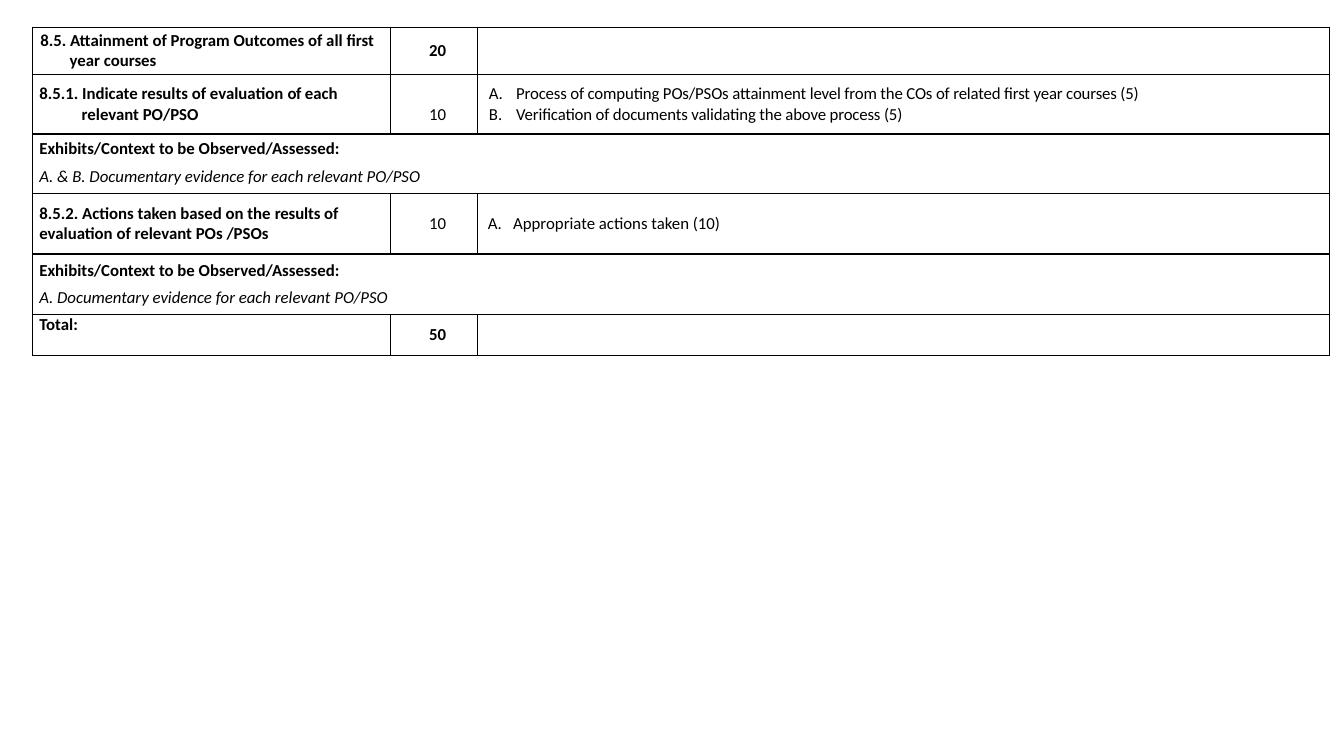
"""Build the slide with the table on attainment of program outcomes."""
from dataclasses import dataclass

from lxml.etree import SubElement
from pptx import Presentation
from pptx.dml.color import RGBColor
from pptx.enum.text import MSO_ANCHOR, PP_ALIGN
from pptx.oxml.ns import qn
from pptx.util import Inches, Pt

BLACK = RGBColor(0x00, 0x00, 0x00)
WHITE = RGBColor(0xFF, 0xFF, 0xFF)


@dataclass
class Para:
    """One paragraph: runs of (text, spacing in points) and its layout."""
    runs: list
    left: float = 0.07
    hanging: float = 0
    before: float = 0
    line: float = None
    bold: bool = False
    italic: bool = False
    centred: bool = False
    lettered: bool = False


@dataclass
class Entry:
    """The content of one table cell."""
    paras: list
    span: int = 1
    top: float = 0
    anchor: MSO_ANCHOR = MSO_ANCHOR.MIDDLE


def heading(*runs, **layout):
    """Return a bold paragraph."""
    return Para(list(runs), bold=True, **layout)


def marks(value, before=0, bold=False, top=0):
    """Return a cell with a centred number of marks."""
    return Entry([Para([(value, 0)], before=before, bold=bold, centred=True)], top=top)


def exhibits(evidence, heading_before, evidence_before, line=None):
    """Return a full-width cell that names the evidence to be assessed."""
    return Entry([
        heading(("Exhibits/Context to be Observed/Assessed:", 0), before=heading_before, line=line),
        Para([(evidence, 0)], before=evidence_before, italic=True),
    ], span=3)


def criterion(text, left, hanging, before=0, spacing=0):
    """Return a lettered list item."""
    return Para([(text, spacing)], left=left, hanging=hanging, before=before, lettered=True)


COLUMN_WIDTHS = [3.55, 0.87, 8.45]
ROW_HEIGHTS = [0.47, 0.59, 0.59, 0.6, 0.6, 0.41]
OUTCOMES = [
    [Entry([heading(("8.5. Attainment of Program Outcomes of all first year courses", 0),
                    left=0.37, hanging=0.29, before=2.7)]),
     marks("20", before=9.7, bold=True), Entry([])],
    [Entry([heading(("8.5.1. Indicate results of evaluation ", 0), ("of ", -0.3),
                    ("each relevant PO/PSO", 0), left=0.49, hanging=0.42, before=6.8)]),
     marks("10", top=0.2),
     Entry([criterion("Process of computing POs/PSOs attainment level from the COs of "
                      "related first year courses (5)", 0.38, 0.27, 6.8, -0.1),
            criterion("Verification of documents validating the above process (5)",
                      0.38, 0.27, spacing=-0.1)])],
    [exhibits("A. & B. Documentary evidence for each relevant PO/PSO", 0, 5.5, 13.7)],
    [Entry([heading(("8.5.2. Actions taken based on the ", 0), ("results ", -0.1),
                    ("of evaluation of relevant POs /PSOs", 0), before=6.9)]),
     marks("10"),
     Entry([criterion("Appropriate actions taken (10)", 0.35, 0.25, 0.1)])],
    [exhibits("A. Documentary evidence for each relevant PO/PSO", 0.9, 4.3)],
    [Entry([heading(("Total:", 0), before=2.1)], anchor=MSO_ANCHOR.TOP),
     marks("50", before=2.1, bold=True), Entry([])],
]


class SlideBuilder:
    """Holds the text style and the current slide."""

    def __init__(self, slide, font="Calibri", size=12, border=1):
        self.slide = slide
        self.font = font
        self.size = size
        self.border = border

    def table(self, left, top, widths, heights, rows):
        frame = self.slide.shapes.add_table(
            len(heights), len(widths), Inches(left), Inches(top),
            Inches(sum(widths)), Inches(sum(heights)))
        table = frame.table
        table.first_row = table.horz_banding = False
        for column, width in zip(table.columns, widths):
            column.width = Inches(width)
        for row, height in zip(table.rows, heights):
            row.height = Inches(height)
        for cell in table.iter_cells():
            self.cell_style(cell)
        for row_index, entries in enumerate(rows):
            for column_index, entry in enumerate(entries):
                cell = table.cell(row_index, column_index)
                if entry.span > 1:
                    cell.merge(table.cell(row_index, column_index + entry.span - 1))
                self.cell_content(cell, entry)

    def cell_style(self, cell):
        cell.margin_left = cell.margin_right = cell.margin_top = cell.margin_bottom = 0
        properties = cell._tc.get_or_add_tcPr()
        for side in ("lnL", "lnR", "lnT", "lnB"):
            edge = SubElement(properties, qn(f"a:{side}"), w=str(Pt(self.border)))
            fill = SubElement(edge, qn("a:solidFill"))
            SubElement(fill, qn("a:srgbClr"), val=str(BLACK))
        cell.fill.solid()
        cell.fill.fore_color.rgb = WHITE

    def cell_content(self, cell, entry):
        cell.vertical_anchor = entry.anchor
        cell.margin_top = Inches(entry.top)
        for index, para in enumerate(entry.paras):
            frame = cell.text_frame
            paragraph = frame.add_paragraph() if index else frame.paragraphs[0]
            self.paragraph(paragraph, para)

    def paragraph(self, paragraph, para):
        paragraph.alignment = PP_ALIGN.CENTER if para.centred else PP_ALIGN.LEFT
        paragraph.space_before = Pt(para.before)
        if para.line:
            paragraph.line_spacing = Pt(para.line)
        properties = paragraph._p.get_or_add_pPr()
        properties.set("marL", str(Inches(para.left)))
        properties.set("indent", str(-Inches(para.hanging)))
        if para.lettered:
            SubElement(properties, qn("a:buFont"), typeface=self.font)
            SubElement(properties, qn("a:buAutoNum"), type="alphaUcPeriod")
        for text, spacing in para.runs:
            self.run(paragraph, text, spacing, para)

    def run(self, paragraph, text, spacing, para):
        run = paragraph.add_run()
        run.text = text
        run.font.name = self.font
        run.font.size = Pt(self.size)
        run.font.bold = para.bold
        run.font.italic = para.italic
        run.font.color.rgb = BLACK
        if spacing:
            run._r.get_or_add_rPr().set("spc", str(round(spacing * 100)))


def main():
    presentation = Presentation()
    presentation.slide_width = Inches(13.33)
    presentation.slide_height = Inches(7.5)
    slide = presentation.slides.add_slide(presentation.slide_layouts[6])
    SlideBuilder(slide).table(0.32, 0.27, COLUMN_WIDTHS, ROW_HEIGHTS, OUTCOMES)
    presentation.save("out.pptx")


if __name__ == "__main__":
    main()
